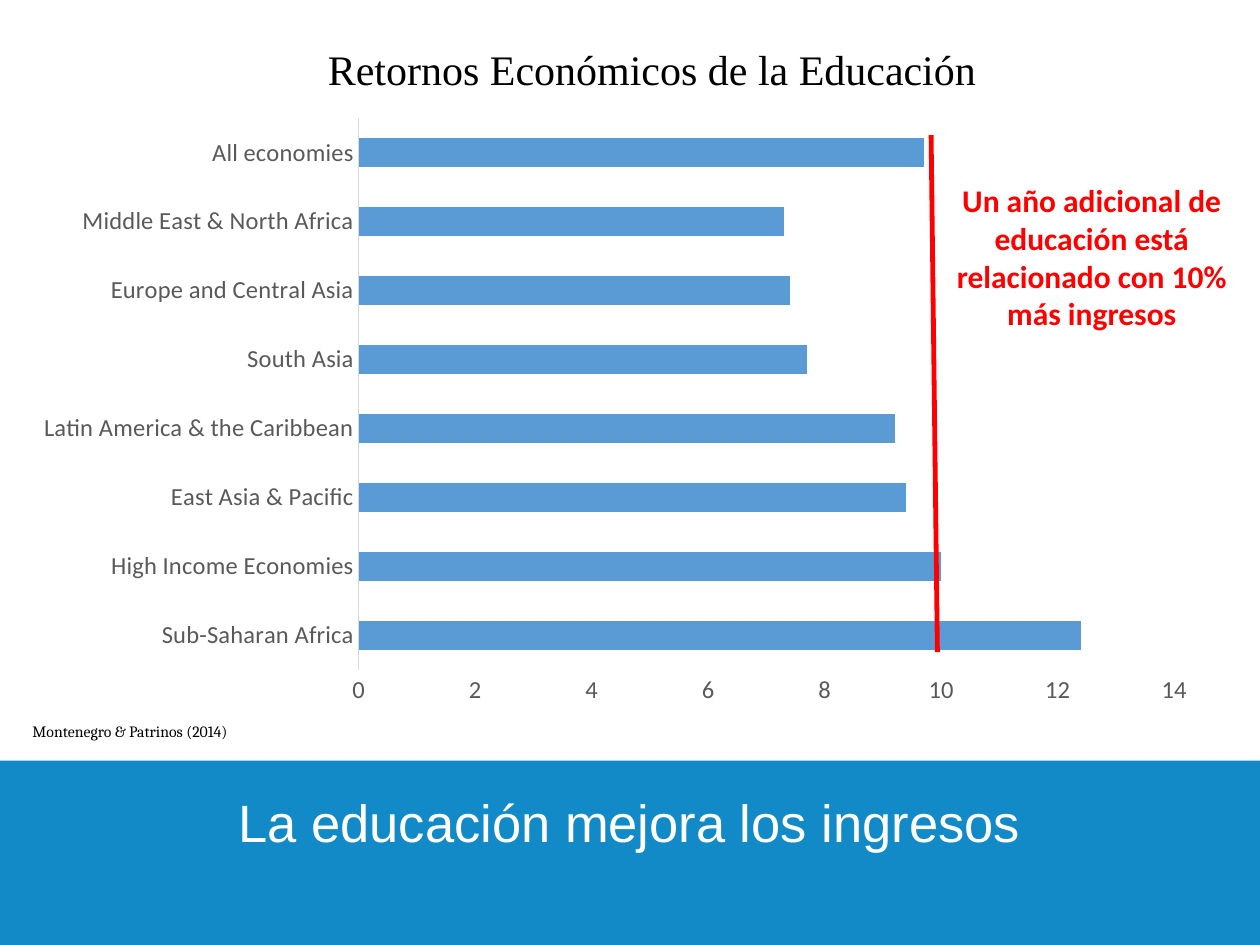
import pptx
import pptx.util
import pptx.dml.color
import pptx.chart.data
import pptx.enum.chart
import pptx.enum.dml
import pptx.enum.shapes
import pptx.enum.text
import lxml.etree

deck = pptx.Presentation()
deck.slide_width = pptx.util.Inches(10)
deck.slide_height = pptx.util.Inches(7.5)
slide = deck.slides.add_slide(deck.slide_layouts[6])
shapes = slide.shapes
wide, high = deck.slide_width, deck.slide_height


def color(text):
    return pptx.dml.color.RGBColor.from_string(text)


def place(left, top, width, height):
    """Turn shares of the slide's size into lengths."""
    return int(left * wide), int(top * high), int(width * wide), int(height * high)


# Blue band over the bottom fifth
band = shapes.add_shape(pptx.enum.shapes.MSO_SHAPE.RECTANGLE, *place(0, 0.805, 1, 0.195))
band.shadow.inherit = False
band.fill.solid()
band.fill.fore_color.rgb = color("118AC7")
band.line.fill.background()

# Bar chart of returns by region
returns = {
    "Sub-Saharan Africa": 12.4,
    "High Income Economies": 10,
    "East Asia & Pacific": 9.4,
    "Latin America & the Caribbean": 9.2,
    "South Asia": 7.7,
    "Europe and Central Asia": 7.4,
    "Middle East & North Africa": 7.3,
    "All economies": 9.7,
}
data = pptx.chart.data.CategoryChartData()
data.categories = list(returns)
data.add_series("Series 1", list(returns.values()))
kind = pptx.enum.chart.XL_CHART_TYPE.BAR_CLUSTERED
chart = shapes.add_chart(kind, *place(0.016, 0.112, 0.945, 0.647), data).chart
chart.has_legend = False
chart.has_title = False
chart.font.name = "Calibri"
chart.font.size = pptx.util.Pt(14)

plot = chart.plots[0]
plot.gap_width = 142
plot.vary_by_categories = False
bars = plot.series[0].format.fill
bars.solid()
bars.fore_color.rgb = color("5B9BD5")

none = pptx.enum.chart.XL_TICK_MARK.NONE
for axis in (chart.category_axis, chart.value_axis):
    axis.has_major_gridlines = False
    axis.major_tick_mark = axis.minor_tick_mark = none
    font = axis.tick_labels.font
    font.name = "Calibri"
    font.size = pptx.util.Pt(14)
    font.color.rgb = color("595959")
chart.category_axis.format.line.color.rgb = color("D9D9D9")
chart.category_axis.format.line.width = pptx.util.Pt(0.75)
chart.value_axis.format.line.fill.background()
for name, value in {"minimum_scale": 0, "maximum_scale": 14, "major_unit": 2}.items():
    setattr(chart.value_axis, name, value)

# Red mark near ten percent
left, top, width, height = place(0.739, 0.143, 0.005, 0.547)
straight = pptx.enum.shapes.MSO_CONNECTOR.STRAIGHT
mark = shapes.add_connector(straight, left, top, left + width, top + height)
mark.line.color.rgb = color("FF0000")
mark.line.width = pptx.util.Pt(2.75)
props = mark.element.spPr
lxml.etree.SubElement(props, pptx.oxml.ns.qn("a:effectLst"))

# Texts: words, place, alignment, wrap, line spacing, font
mid = pptx.enum.text.PP_ALIGN.CENTER
start = pptx.enum.text.PP_ALIGN.LEFT
texts = [
    ("Retornos Económicos de la Educación", (0.177, 0.039, 0.681, 0.067),
     mid, True, 1, {"name": "Times New Roman", "size": 24, "color": "000000"}),
    ("Un año adicional de educación está relacionado con 10% más ingresos",
     (0.744, 0.185, 0.245, 0.175),
     mid, True, 1, {"name": "Calibri", "size": 18, "color": "FF0000", "bold": True}),
    ("Montenegro & Patrinos (2014)", (0.016, 0.757, 0.186, 0.033),
     start, False, 1, {"name": "Cambria", "size": 9, "color": "000000"}),
    ("La educación mejora los ingresos", (0.037, 0.837, 0.925, 0.075),
     mid, True, 0.9, {"name": "Arial", "size": 30, "color": "FFFFFF"}),
]
for words, spot, align, wrap, space, style in texts:
    frame = shapes.add_textbox(*place(*spot)).text_frame
    frame.word_wrap = wrap
    frame.auto_size = pptx.enum.text.MSO_AUTO_SIZE.SHAPE_TO_FIT_TEXT
    line = frame.paragraphs[0]
    line.alignment = align
    line.line_spacing = space
    run = line.add_run()
    run.text = words
    for name, value in style.items():
        if name == "color":
            run.font.color.rgb = color(value)
        else:
            setattr(run.font, name, pptx.util.Pt(value) if name == "size" else value)

deck.save("out.pptx")
